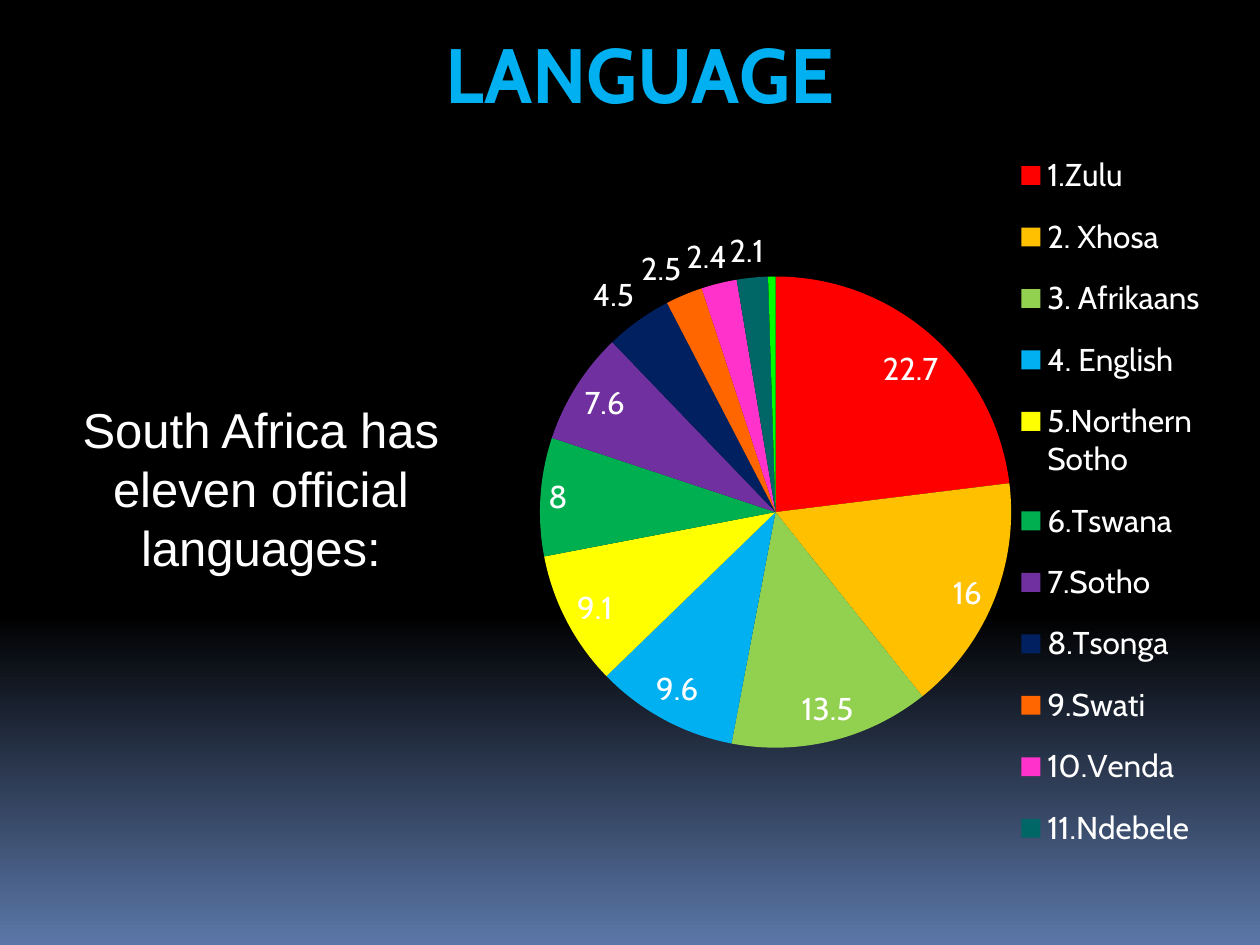
from copy import deepcopy
from dataclasses import dataclass

from lxml.etree import SubElement
from pptx import Presentation
from pptx.chart.data import CategoryChartData
from pptx.dml.color import RGBColor as Rgb
from pptx.enum.chart import XL_CHART_TYPE as ChartType
from pptx.enum.chart import XL_LABEL_POSITION as LabelPos
from pptx.enum.chart import XL_LEGEND_POSITION as LegendPos
from pptx.enum.text import MSO_AUTO_SIZE as AutoSize
from pptx.enum.text import PP_ALIGN as Align
from pptx.oxml import parse_xml
from pptx.oxml.ns import nsdecls, qn
from pptx.util import Inches, Pt


@dataclass(frozen=True)
class Theme:
    head_font: str = "Cabin"
    body_font: str = "Arial"
    head_size: int = 44
    body_size: int = 28
    chart_size: int = 18
    accent: str = "00B0F0"
    light: str = "FFFFFF"
    backdrop: tuple = ((0, "000000"), (0.65, "000000"), (1, "5B77A8"))


# Language, share of speakers and slice colour; the last slice is unnamed
SHARES = [
    ("1.Zulu", 22.7, "FF0000"),
    ("2. Xhosa", 16, "FFC000"),
    ("3. Afrikaans", 13.5, "92D050"),
    ("4. English", 9.6, "00B0F0"),
    ("5.Northern Sotho", 9.1, "FFFF00"),
    ("6.Tswana", 8, "00B050"),
    ("7.Sotho", 7.6, "7030A0"),
    ("8.Tsonga", 4.5, "002060"),
    ("9.Swati", 2.5, "FF6600"),
    ("10.Venda", 2.4, "FF33CC"),
    ("11.Ndebele", 2.1, "006666"),
    ("", 0.5, "00FF00"),
]


def set_layout(parent, after, x, y, w, h, inner=False):
    """Place a chart part by fractions of the chart area."""
    for old in parent.findall(qn("c:layout")):
        parent.remove(old)
    layout = parse_xml(f"<c:layout {nsdecls('c')}/>")
    manual = SubElement(layout, qn("c:manualLayout"))
    settings = [("xMode", "edge"), ("yMode", "edge"),
                ("x", x), ("y", y), ("w", w), ("h", h)]
    if inner:
        settings.insert(0, ("layoutTarget", "inner"))
    for tag, value in settings:
        SubElement(manual, qn(f"c:{tag}")).set("val", str(value))
    if after is None:
        parent.insert(0, layout)
    else:
        after.addnext(layout)


def hide_entry(tag, index):
    return parse_xml(f'<c:{tag} {nsdecls("c")}><c:idx val="{index}"/>'
                     f'<c:delete val="1"/></c:{tag}>')


class SlideBuilder:
    def __init__(self, deck, theme):
        self.theme = theme
        self.page = deck.slides.add_slide(deck.slide_layouts[6])

    def background(self):
        fill = self.page.background.fill
        fill.gradient()
        fill.gradient_angle = 270
        stop_list = self.page.element.find(".//" + qn("a:gsLst"))
        stop_list.append(deepcopy(stop_list[-1]))
        for stop, (position, color) in zip(fill.gradient_stops, self.theme.backdrop):
            stop.position = position
            stop.color.rgb = Rgb.from_string(color)

    def style(self, font, name, size, color, bold=False):
        font.name, font.size, font.bold = name, Pt(size), bold
        font.color.rgb = Rgb.from_string(color)

    def text(self, words, place, name, size, color, bold=False):
        box = self.page.shapes.add_textbox(*map(Inches, place))
        frame = box.text_frame
        frame.word_wrap = True
        frame.auto_size = AutoSize.SHAPE_TO_FIT_TEXT
        frame.text = words
        para = frame.paragraphs[0]
        para.alignment = Align.CENTER
        self.style(para.runs[0].font, name, size, color, bold)

    def pie(self, shares, place):
        theme = self.theme
        data = CategoryChartData()
        data.categories = [name for name, _, _ in shares]
        data.add_series("Series 1", [value for _, value, _ in shares])
        chart = self.page.shapes.add_chart(
            ChartType.PIE, *map(Inches, place), data).chart
        chart.has_title = False
        self.style(chart.font, theme.head_font, theme.chart_size, theme.light)

        # Slices
        plot = chart.plots[0]
        plot.vary_by_categories = True
        series = plot.series[0]
        for index, (_, _, color) in enumerate(shares):
            fill = series.points[index].format.fill
            fill.solid()
            fill.fore_color.rgb = Rgb.from_string(color)

        # Value labels
        labels = series.data_labels
        labels.show_value = True
        labels.show_percentage = False
        labels.position = LabelPos.BEST_FIT
        self.style(labels.font, theme.head_font, theme.chart_size, theme.light)

        # Legend
        chart.has_legend = True
        legend = chart.legend
        legend.position = LegendPos.RIGHT
        legend.include_in_layout = False
        self.style(legend.font, theme.head_font, theme.chart_size, theme.light)

        # The unnamed slice has neither a label nor a legend entry
        last = len(shares) - 1
        label_list = series._element.find(qn("c:dLbls"))
        label_list.insert(0, hide_entry("dLbl", last))
        legend_part = legend._element
        entry = hide_entry("legendEntry", last)
        legend_part.find(qn("c:legendPos")).addnext(entry)

        set_layout(legend_part, entry, 0.68, 0.13, 0.3, 0.72)
        plot_area = chart._chartSpace.find(".//" + qn("c:plotArea"))
        set_layout(plot_area, None, 0.06, 0.27, 0.64, 0.46, inner=True)


def main():
    deck = Presentation()
    deck.slide_width, deck.slide_height = Inches(10), Inches(7.5)
    theme = Theme()
    slide = SlideBuilder(deck, theme)
    slide.background()
    slide.pie(SHARES, (3.91, 0, 5.91, 8.13))
    slide.text("LANGUAGE", (2.5, 0.16, 5.16, 0.84),
               theme.head_font, theme.head_size, theme.accent, bold=True)
    slide.text("South Africa has eleven official languages:", (0, 3.12, 4.14, 1.82),
               theme.body_font, theme.body_size, theme.light)
    deck.save("out.pptx")


if __name__ == "__main__":
    main()
